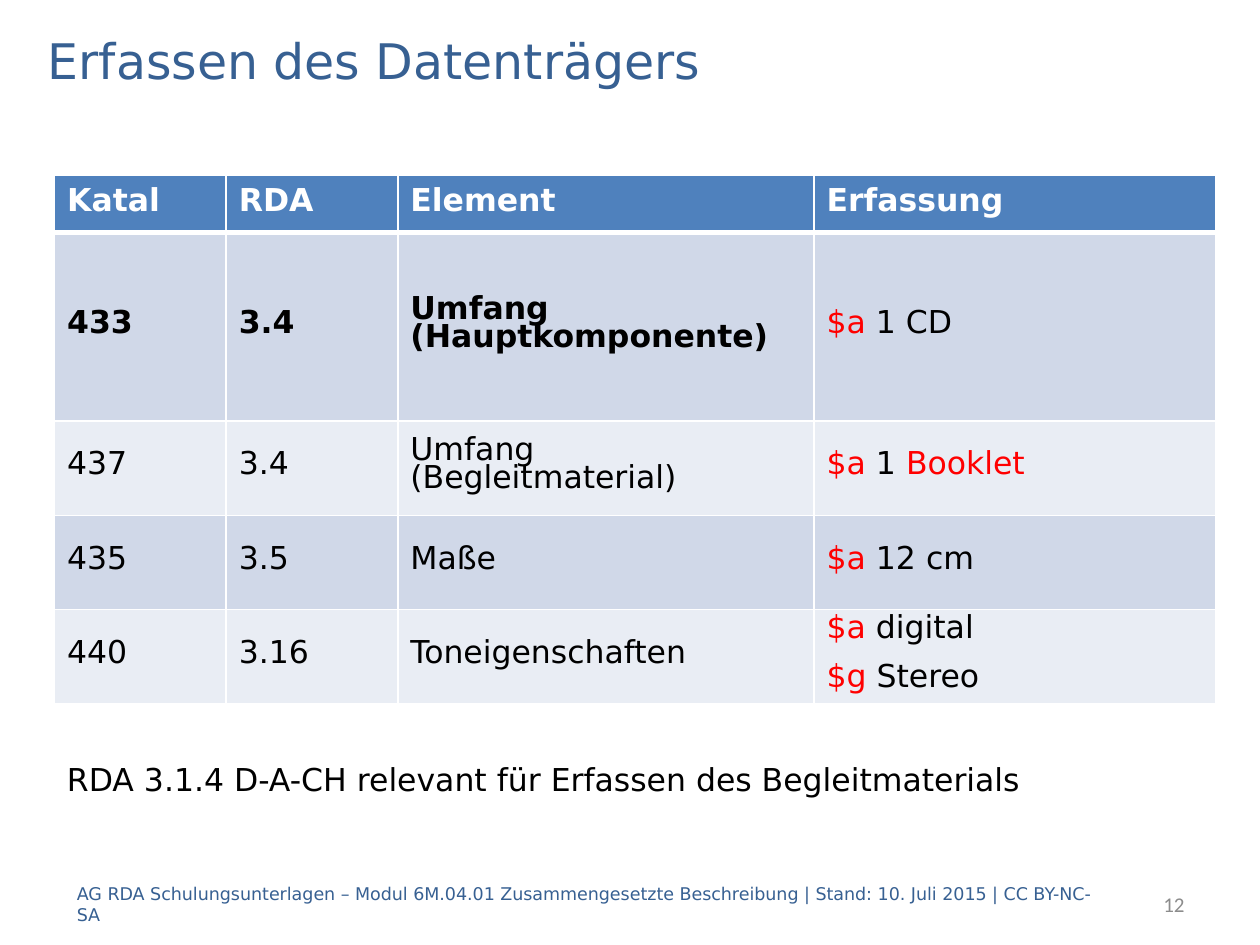
from lxml import etree
from pptx import Presentation
from pptx.dml.color import RGBColor
from pptx.enum.text import MSO_ANCHOR, PP_ALIGN
from pptx.oxml.ns import qn
from pptx.util import Cm, Pt

MIDDLE, TOP = MSO_ANCHOR.MIDDLE, MSO_ANCHOR.TOP
LEFT, RIGHT = PP_ALIGN.LEFT, PP_ALIGN.RIGHT

WHITE = RGBColor(0xFF, 0xFF, 0xFF)
BLACK = RGBColor(0x00, 0x00, 0x00)
RED = RGBColor(0xFF, 0x00, 0x00)
GREY = RGBColor(0x8C, 0x8C, 0x8C)
DARK_BLUE = RGBColor(0x37, 0x60, 0x92)
HEADER_BLUE = RGBColor(0x4F, 0x81, 0xBD)
BANDS = (RGBColor(0xD0, 0xD8, 0xE8), RGBColor(0xE9, 0xED, 0xF4))

FONT = "DejaVu Sans"
COL_WIDTHS = (3.46, 3.46, 8.39, 8.09)
ROW_HEIGHTS = (1.15, 3.8, 1.9, 1.9, 1.9)

HEADERS = ("Katal", "RDA", "Element", "Erfassung")
# The last entry of a row holds its paragraphs, each a list of (text, colour) runs.
ROWS = (
    ("433", "3.4", "Umfang (Hauptkomponente)",
     [[("$a", RED), (" 1 CD", BLACK)]]),
    ("437", "3.4", "Umfang (Begleitmaterial)",
     [[("$a", RED), (" 1 ", BLACK), ("Booklet", RED)]]),
    ("435", "3.5", "Maße",
     [[("$a", RED), (" 12 cm", BLACK)]]),
    ("440", "3.16", "Toneigenschaften",
     [[("$a", RED), (" digital", BLACK)], [("$g", RED), (" Stereo", BLACK)]]),
)


def format_paragraph(p, size, color=None, bold=False, font=FONT):
    p.font.name = font
    p.font.size = Pt(size)
    p.font.bold = bold
    if color is not None:
        p.font.color.rgb = color


def set_text(shape, text, size, color, font=FONT, align=LEFT):
    tf = shape.text_frame
    tf.word_wrap = True
    tf.vertical_anchor = MIDDLE
    p = tf.paragraphs[0]
    p.text = text
    p.alignment = align
    format_paragraph(p, size, color, font=font)


def add_title(s, text):
    title = s.shapes.title
    title.left, title.top = Cm(0.71), Cm(0.5)
    title.width, title.height = Cm(24), Cm(1.42)
    set_text(title, text, 28, DARK_BLUE)


def add_text(s, box, *args, **kwargs):
    set_text(s.shapes.add_textbox(*map(Cm, box)), *args, **kwargs)


def fill_cell(cell, fill, anchor):
    cell.fill.solid()
    cell.fill.fore_color.rgb = fill
    cell.vertical_anchor = anchor


def set_bottom_border(cell, color, width):
    line = etree.Element(qn("a:lnB"), w=str(Pt(width)))
    fill = etree.SubElement(line, qn("a:solidFill"))
    etree.SubElement(fill, qn("a:srgbClr"), val=str(color))
    # Borders must come before the fill.
    cell._tc.get_or_add_tcPr().insert(0, line)


def space_paragraph(p):
    p.line_spacing = Pt(16)
    p.space_before = p.space_after = Pt(6)


def write_plain_cell(cell, text, bold):
    p = cell.text_frame.paragraphs[0]
    p.text = text
    format_paragraph(p, 18, BLACK, bold)
    space_paragraph(p)


def write_coloured_cell(cell, paragraphs):
    tf = cell.text_frame
    for i, runs in enumerate(paragraphs):
        p = tf.add_paragraph() if i else tf.paragraphs[0]
        format_paragraph(p, 18)
        space_paragraph(p)
        for text, color in runs:
            r = p.add_run()
            r.text = text
            r.font.color.rgb = color


def add_element_table(s):
    """The default table style supplies the thin white grid lines."""
    frame = s.shapes.add_table(
        len(ROW_HEIGHTS), len(COL_WIDTHS), Cm(1.1), Cm(3.54),
        Cm(sum(COL_WIDTHS)), Cm(sum(ROW_HEIGHTS)))
    table = frame.table
    for column, width in zip(table.columns, COL_WIDTHS):
        column.width = Cm(width)
    for row, height in zip(table.rows, ROW_HEIGHTS):
        row.height = Cm(height)

    for c, header in enumerate(HEADERS):
        cell = table.cell(0, c)
        fill_cell(cell, HEADER_BLUE, TOP)
        set_bottom_border(cell, WHITE, 3)
        p = cell.text_frame.paragraphs[0]
        p.text = header
        format_paragraph(p, 18, WHITE, bold=True)

    for r, (*labels, entry) in enumerate(ROWS, start=1):
        for c in range(len(HEADERS)):
            fill_cell(table.cell(r, c), BANDS[(r - 1) % 2], MIDDLE)
        for c, label in enumerate(labels):
            write_plain_cell(table.cell(r, c), label, bold=r == 1)
        write_coloured_cell(table.cell(r, len(labels)), entry)


def main():
    prs = Presentation()
    prs.slide_width, prs.slide_height = Cm(25.4), Cm(19.05)
    s = prs.slides.add_slide(prs.slide_layouts[5])

    add_title(s, "Erfassen des Datenträgers")
    add_element_table(s)
    add_text(s, (1.1, 15, 24, 1.42),
             "RDA 3.1.4 D-A-CH relevant für Erfassen des Begleitmaterials",
             18, BLACK)
    add_text(s, (1.3, 17.71, 21.2, 1.02),
             "AG RDA Schulungsunterlagen – Modul 6M.04.01 Zusammengesetzte "
             "Beschreibung | Stand: 10. Juli 2015 | CC BY-NC-SA",
             10, DARK_BLUE)
    add_text(s, (20.09, 17.71, 4.04, 1.02), "12", 12, GREY,
             font="Calibri", align=RIGHT)

    prs.save("out.pptx")


if __name__ == "__main__":
    main()
